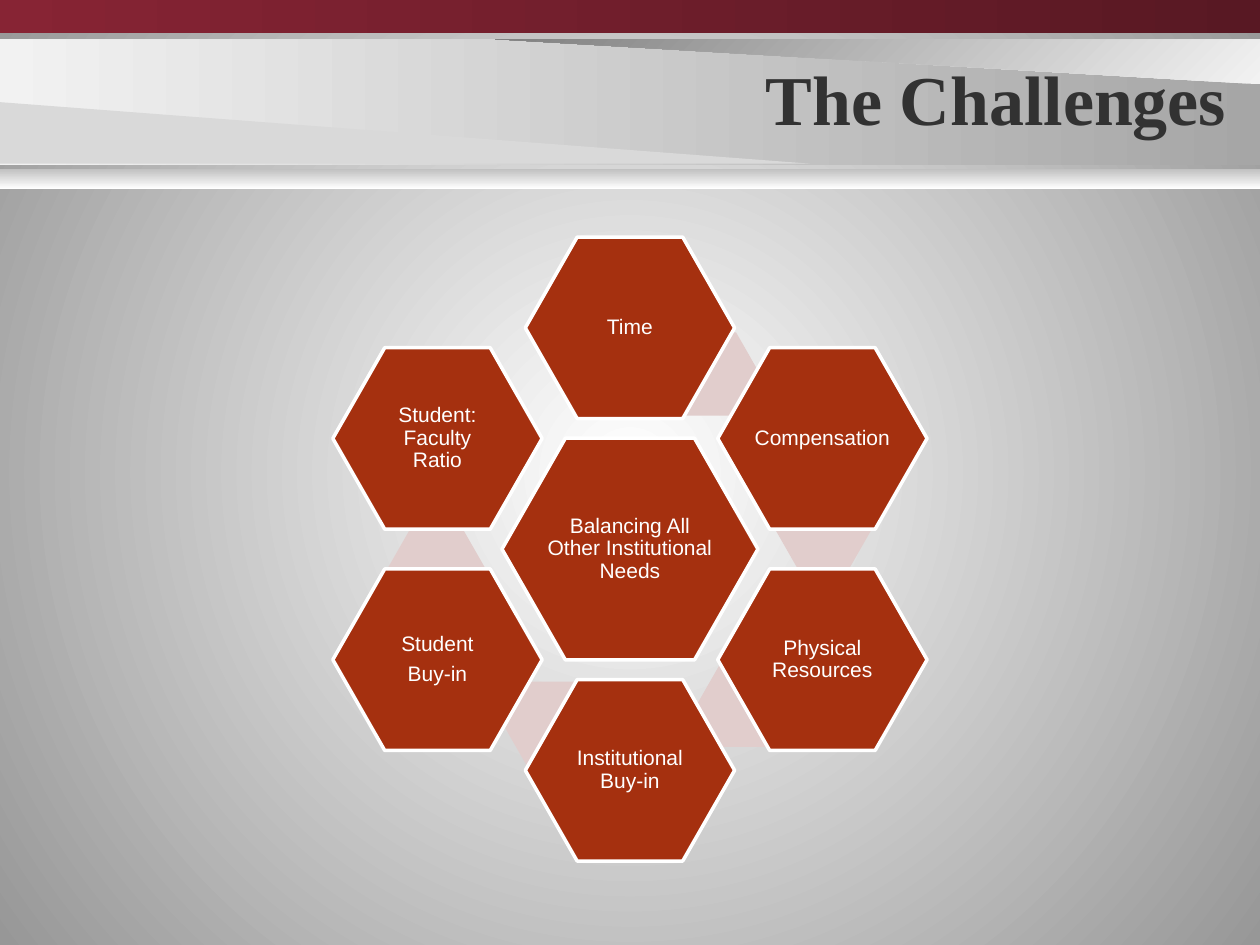
from lxml.etree import SubElement
from pptx import Presentation
from pptx.dml.color import RGBColor
from pptx.enum.shapes import MSO_SHAPE as Shape
from pptx.enum.text import MSO_ANCHOR as Anchor, PP_ALIGN as Align
from pptx.oxml.ns import qn
from pptx.util import Cm, Pt

# Content: text, ring position in grid steps, side margin in cm
TITLE = "The Challenges"
HUB = "Balancing All Other Institutional Needs"
CHALLENGES = [
    ("Time", (0, -2), 0),
    ("Compensation", (1, -1), 0),
    ("Physical Resources", (1, 1), 0),
    ("Institutional Buy-in", (0, 2), 0),
    ("Student\nBuy-in", (-1, 1), 0),
    ("Student: Faculty Ratio", (-1, -1), 0.25),
]

# Layout in cm
WIDTH, HEIGHT = 25.4, 19.05
HUB_X, HUB_Y = 12.7, 11.07
STEP_X, STEP_Y = 3.88, 2.23
HUB_SIZE, NODE_SIZE, ACCENT_SIZE = (5.16, 4.47), (4.22, 3.66), (1.96, 1.68)
ACCENT_OFFSETS = [(1.64, -3.53), (3.9, -0.41), (2.32, 3.15), (-1.59, 3.51), (-3.9, 0.38)]

# Bands: top, height, colours, gradient angle (counter-clockwise)
HEADER = (0.79, 2.54, ("F2F2F2", "A6A6A6"), 0)
TOP_BAR = (0, 0.66, ("872434", "581823"), 0)
UNDERLINE = (3.4, 0.41, ("BFBFBF", "FFFFFF"), 270)

RUST, PINK, WHITE, CHARCOAL = "A5300F", "E1CDCC", "FFFFFF", "323232"


def rgb(value):
    return RGBColor.from_string(value)


def paint(fill, colors, angle=None):
    """Fill with one colour, or with a gradient between two."""
    if isinstance(colors, str):
        fill.solid()
        fill.fore_color.rgb = rgb(colors)
        return
    fill.gradient()
    for stop, position, color in zip(fill.gradient_stops, (0, 1), colors):
        stop.position = position
        stop.color.rgb = rgb(color)
    if angle is not None:
        fill.gradient_angle = angle


def style(shape, colors, angle=None, outline=None):
    shape.shadow.inherit = False
    paint(shape.fill, colors, angle)
    if outline:
        shape.line.color.rgb = rgb(outline)
        shape.line.width = Pt(2)
    else:
        shape.line.fill.background()


def write(shape, text, font="Arial", size=12, color=WHITE, bold=False,
          align=Align.CENTER, margin=0, spacing=0.9, after=4.7):
    frame = shape.text_frame
    frame.word_wrap = True
    frame.vertical_anchor = Anchor.MIDDLE
    frame.margin_left = frame.margin_right = Cm(margin)
    frame.margin_top = frame.margin_bottom = Cm(0.05)
    frame.text = text
    for paragraph in frame.paragraphs:
        paragraph.alignment = align
        paragraph.line_spacing = spacing
        paragraph.space_after = Pt(after)
        for run in paragraph.runs:
            run.font.name, run.font.size, run.font.bold = font, Pt(size), bold
            run.font.color.rgb = rgb(color)


def add_band(slide, top, height, colors, angle):
    band = slide.shapes.add_shape(Shape.RECTANGLE, 0, Cm(top), Cm(WIDTH), Cm(height))
    style(band, colors, angle)


def add_wedge(slide, points, colors, angle=None):
    start, *rest = [(Cm(x), Cm(y)) for x, y in points]
    builder = slide.shapes.build_freeform(*start)
    builder.add_line_segments(rest, close=True)
    style(builder.convert_to_shape(), colors, angle)


def add_hexagon(slide, offset, size, color, outline=None):
    (dx, dy), (w, h) = offset, size
    hexagon = slide.shapes.add_shape(
        Shape.HEXAGON, Cm(HUB_X + dx - w / 2), Cm(HUB_Y + dy - h / 2), Cm(w), Cm(h))
    hexagon.adjustments[0] = 0.286
    style(hexagon, color, outline=outline)
    return hexagon


def main():
    prs = Presentation()
    prs.slide_width, prs.slide_height = Cm(WIDTH), Cm(HEIGHT)
    slide = prs.slides.add_slide(prs.slide_layouts[6])

    # Radial background
    paint(slide.background.fill, ("FFFFFF", "979797"))
    gradient = slide.background._cSld.find(".//" + qn("a:gradFill"))
    gradient.remove(gradient.find(qn("a:lin")))
    radial = SubElement(gradient, qn("a:path"), {"path": "circle"})
    SubElement(radial, qn("a:fillToRect"), dict.fromkeys("ltrb", "50000"))

    # Header
    add_band(slide, *HEADER)
    add_wedge(slide, [(9.98, 0.79), (WIDTH, 1.7), (WIDTH, 0.79)], ("F2F2F2", "808080"), 135)
    add_wedge(slide, [(0, 2.06), (16.33, 3.3), (0, 3.3)], "D9D9D9")
    add_band(slide, *TOP_BAR)
    add_band(slide, *UNDERLINE)
    title = slide.shapes.add_textbox(Cm(6.55), Cm(0.76), Cm(18.42), Cm(2.41))
    write(title, TITLE, font="Times New Roman", size=40, color=CHARCOAL, bold=True,
          align=Align.RIGHT, margin=0.25, spacing=1, after=0)

    # Links behind the ring, then the hub and its ring
    for offset in ACCENT_OFFSETS:
        add_hexagon(slide, offset, ACCENT_SIZE, PINK)
    write(add_hexagon(slide, (0, 0), HUB_SIZE, RUST, WHITE), HUB)
    for text, (column, row), margin in CHALLENGES:
        node = add_hexagon(slide, (column * STEP_X, row * STEP_Y), NODE_SIZE, RUST, WHITE)
        write(node, text, margin=margin)

    prs.save("out.pptx")


if __name__ == "__main__":
    main()
